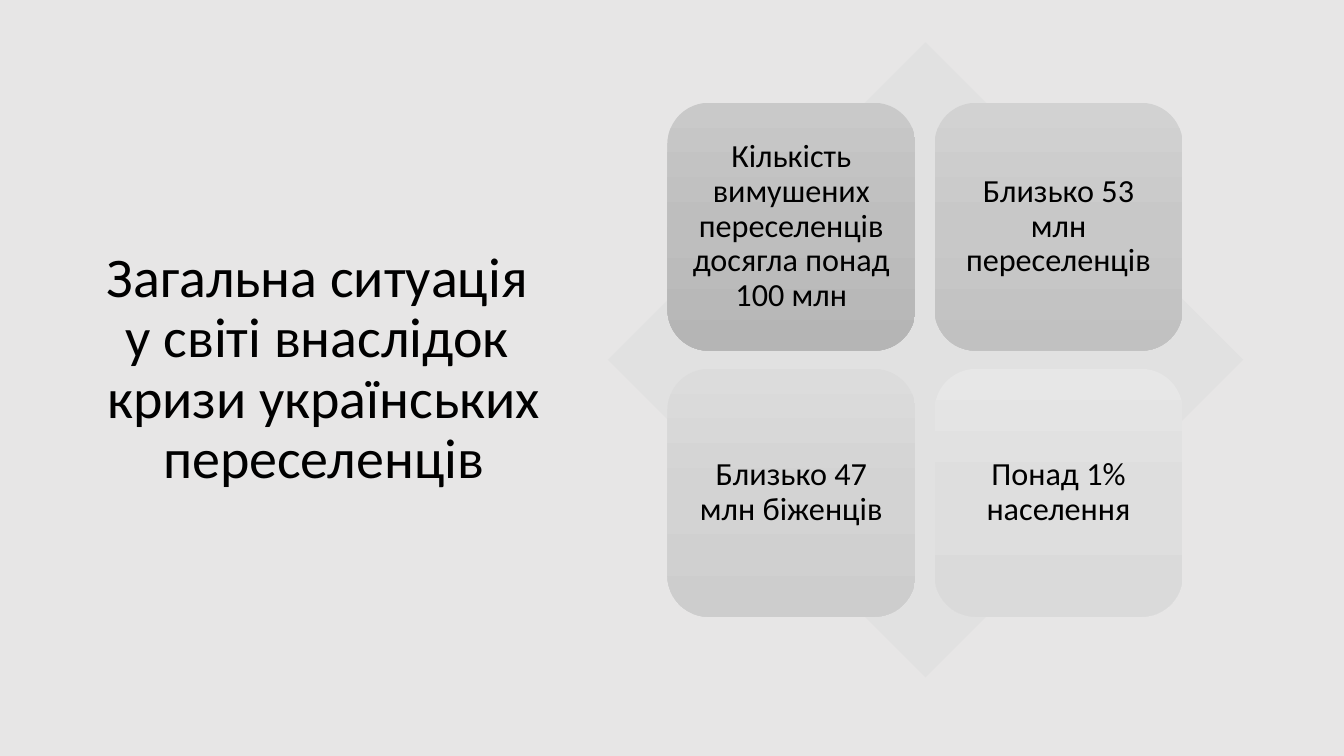
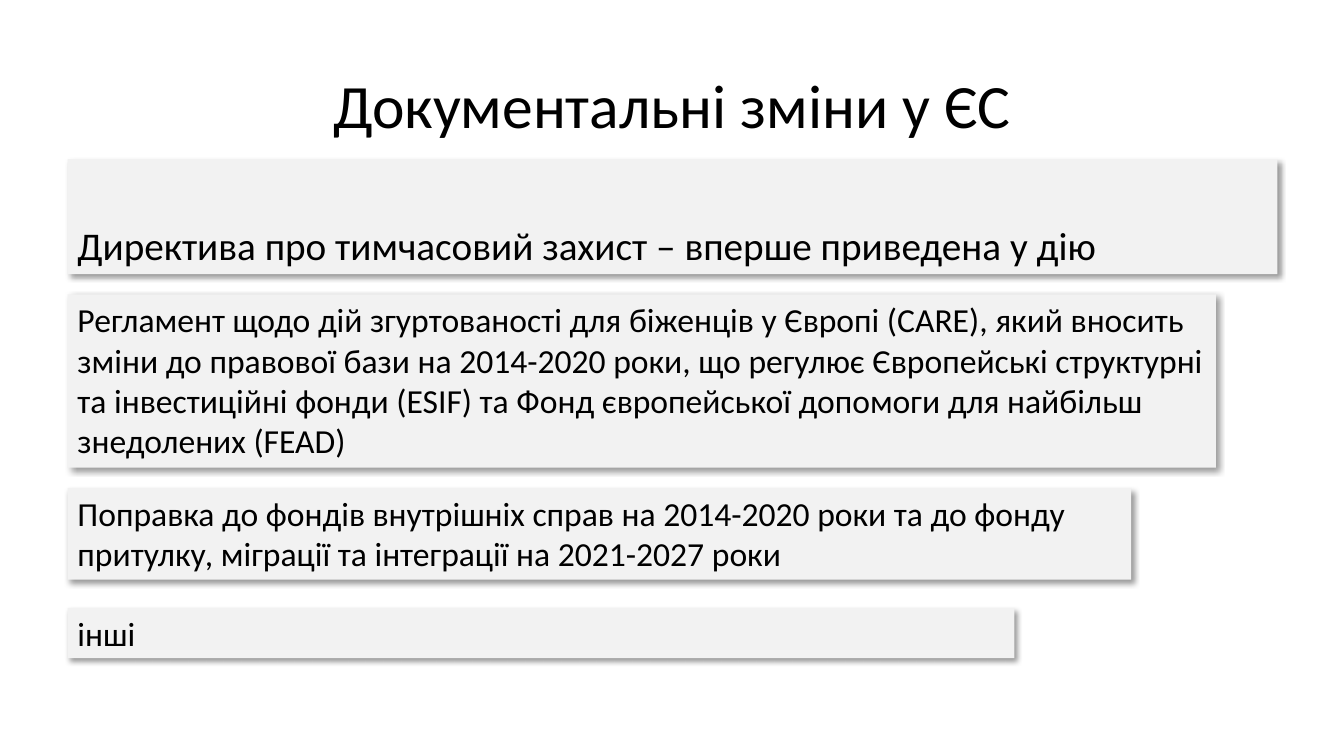
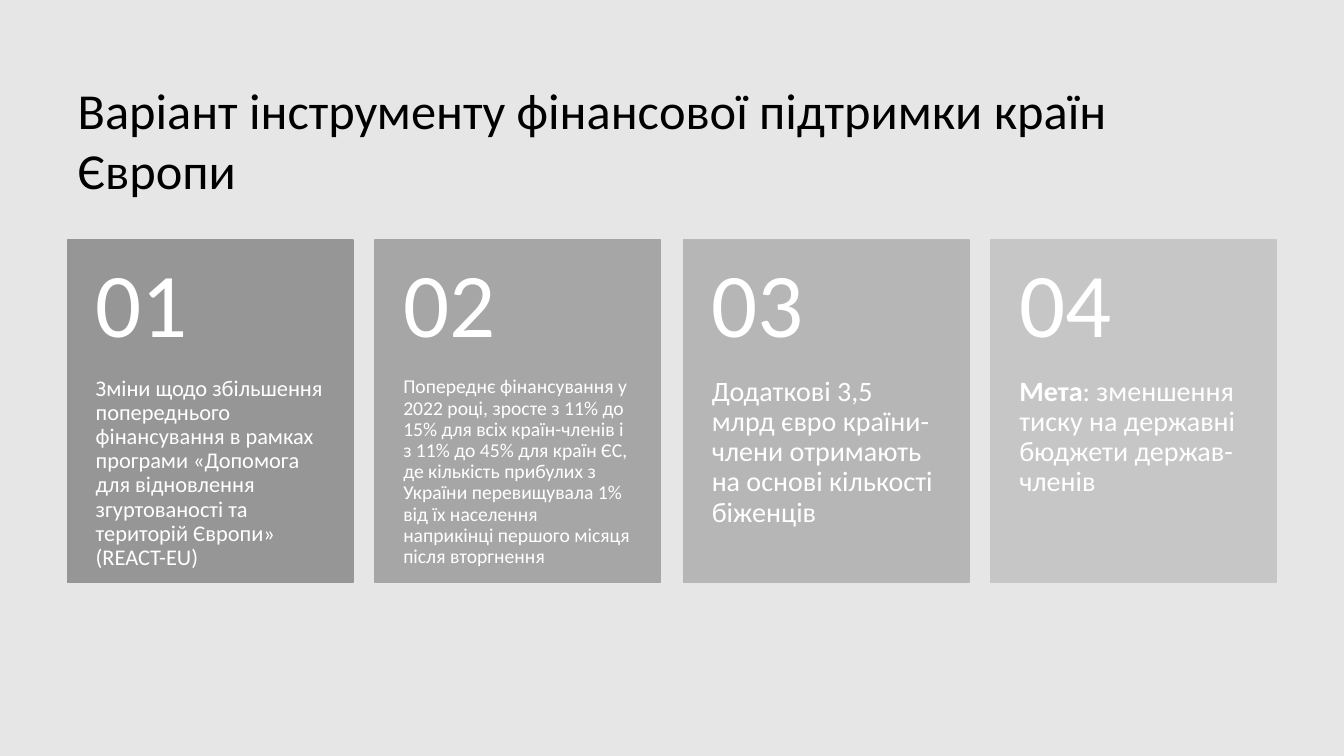
from copy import deepcopy
from dataclasses import dataclass

from lxml.etree import SubElement
from pptx import Presentation
from pptx.dml.color import RGBColor
from pptx.enum.shapes import MSO_SHAPE
from pptx.enum.text import MSO_ANCHOR, MSO_AUTO_SIZE, PP_ALIGN
from pptx.oxml.ns import qn
from pptx.util import Emu, Pt

EMU_PER_PX = 9144  # 100 px to the inch
TITLE_ONLY = 5


@dataclass(frozen=True)
class Theme:
    font: str = "Calibri"
    ink: str = "000000"
    white: str = "FFFFFF"
    grey_page: str = "E7E6E6"
    diamond: str = "E1E1E1"
    bar: str = "F2F2F2"
    title_side: int = 40
    title_top: int = 44
    title_wide: int = 36
    tile_text: int = 23
    bar_lead: int = 28
    bar_text: int = 24
    card_number: int = 65
    tight: float = 0.9


THEME = Theme()

# Slide content
SITUATION_TITLE = "Загальна ситуація \nу світі внаслідок \nкризи українських переселенців"
TILES = [
    ("Кількість вимушених переселенців досягла понад 100 млн", ("C9C9C9", "BEBEBE", "B5B5B5")),
    ("Близько 53 млн переселенців", ("D2D2D2", "C8C8C8", "C1C1C1")),
    ("Близько 47 млн біженців", ("DCDCDC", "D3D3D3", "CDCDCD")),
    ("Понад 1% населення", ("E7E7E7", "DEDEDE", "DADADA")),
]
LEAD_BAR = "Директива про тимчасовий захист – вперше приведена у дію"
BARS = [  # top, width, height, text
    (292, 1139, 172,
     "Регламент щодо дій згуртованості для біженців у Європі (CARE), який вносить зміни "
     "до правової бази на 2014-2020 роки, що регулює Європейські структурні та інвестиційні "
     "фонди (ESIF) та Фонд європейської допомоги для найбільш знедолених (FEAD)"),
    (484, 1055, 91,
     "Поправка до фондів внутрішніх справ на 2014-2020 роки та до фонду притулку, "
     "міграції та інтеграції на 2021-2027 роки"),
    (603, 939, 50, "інші"),
]
CARDS = [  # fill, type size, bold lead, text
    ("969696", 16, "",
     "Зміни щодо збільшення попереднього фінансування в рамках програми «Допомога для "
     "відновлення згуртованості та територій Європи» (REACT-EU)"),
    ("A6A6A6", 14, "",
     "Попереднє фінансування у 2022 році, зросте з 11% до 15% для всіх країн-членів і "
     "з 11% до 45% для країн ЄС, де кількість прибулих з України перевищувала 1% від їх "
     "населення наприкінці першого місяця після вторгнення"),
    ("B6B6B6", 20, "",
     "Додаткові 3,5 млрд євро країни-члени отримають на основі кількості біженців"),
    ("C6C6C6", 20, "Мета", ": зменшення тиску на державні бюджети держав-членів"),
]


def px(value):
    return Emu(round(value) * EMU_PER_PX)


def colour(code):
    return RGBColor.from_string(code)


def write(shape, text, size, ink=THEME.ink, align=PP_ALIGN.LEFT, anchor=MSO_ANCHOR.TOP,
          spacing=1.0, insets=(10, 5, 10, 5), lead=""):
    """Put one paragraph, with an optional bold lead, into a shape."""
    frame = shape.text_frame
    frame.word_wrap = True
    frame.auto_size = MSO_AUTO_SIZE.NONE
    frame.vertical_anchor = anchor
    (frame.margin_left, frame.margin_top,
     frame.margin_right, frame.margin_bottom) = map(px, insets)
    para = frame.paragraphs[0]
    para.text = lead or text
    if lead:
        para.runs[0].font.bold = True
        para.add_run().text = text
    para.alignment = align
    para.line_spacing = spacing
    for span in para.runs:
        span.font.name = THEME.font
        span.font.size = Pt(size)
        span.font.color.rgb = colour(ink)


def add_page(deck, background, title, box, size, **style):
    page = deck.slides.add_slide(deck.slide_layouts[TITLE_ONLY])
    page.background.fill.solid()
    page.background.fill.fore_color.rgb = colour(background)
    heading = page.shapes.title
    heading.left, heading.top, heading.width, heading.height = map(px, box)
    write(heading, title, size, **style)
    return page


def add_block(page, preset, box, fill=None):
    block = page.shapes.add_shape(preset, *map(px, box))
    block.shadow.inherit = False
    block.line.fill.background()
    if fill:
        block.fill.solid()
        block.fill.fore_color.rgb = colour(fill)
    return block


def add_tile(page, box, text, shades):
    """Rounded tile with a three-stop gradient running downwards."""
    tile = add_block(page, MSO_SHAPE.ROUNDED_RECTANGLE, box)
    tile.fill.gradient()
    tile.fill.gradient_angle = 270
    stops = tile._element.spPr.find(".//" + qn("a:gsLst"))
    stops.insert(1, deepcopy(stops[0]))
    for stop, shade, position in zip(tile.fill.gradient_stops, shades, (0, 0.5, 1)):
        stop.color.rgb = colour(shade)
        stop.position = position
    write(tile, text, THEME.tile_text, align=PP_ALIGN.CENTER, anchor=MSO_ANCHOR.MIDDLE,
          spacing=THEME.tight, insets=(10, 10, 10, 10))


def add_bar(page, box, text, size, **style):
    """Pale bar with a soft shadow to the lower right."""
    bar = add_block(page, MSO_SHAPE.RECTANGLE, box, THEME.bar)
    effects = bar._element.spPr.find(qn("a:effectLst"))
    shadow = SubElement(effects, qn("a:outerShdw"), blurRad=str(Pt(4)), dist=str(Pt(3)),
                        dir="2700000", algn="tl", rotWithShape="0")
    tint = SubElement(shadow, qn("a:srgbClr"), val=THEME.ink)
    SubElement(tint, qn("a:alpha"), val="40000")
    write(bar, text, size, **style)


def add_card(page, left, top, width, number, fill, size, lead, text):
    """Card with a large number above its text."""
    height, number_height = 340, 136
    card = add_block(page, MSO_SHAPE.RECTANGLE, (left, top, width, height), fill)
    card.line.color.rgb = colour(fill)
    card.line.width = Pt(1)
    write(card, text, size, ink=THEME.white, spacing=THEME.tight,
          insets=(28, number_height, 28, 0), lead=lead)
    label = page.shapes.add_textbox(*map(px, (left, top, width, number_height)))
    write(label, f"{number:02d}", THEME.card_number, ink=THEME.white,
          anchor=MSO_ANCHOR.MIDDLE, spacing=THEME.tight, insets=(28, 18, 28, 18))


def build_situation(deck):
    page = add_page(deck, THEME.grey_page, SITUATION_TITLE, (65, 216, 512, 276),
                    THEME.title_side, align=PP_ALIGN.CENTER, anchor=MSO_ANCHOR.BOTTOM,
                    spacing=THEME.tight)
    add_block(page, MSO_SHAPE.DIAMOND, (603, 42, 630, 630), THEME.diamond)
    for index, (text, shades) in enumerate(TILES):
        row, column = divmod(index, 2)
        add_tile(page, (662 + column * 265, 102 + row * 264, 246, 246), text, shades)


def build_documents(deck):
    page = add_page(deck, THEME.white, "Документальні зміни у ЄС", (67, 32, 1200, 114),
                    THEME.title_top, align=PP_ALIGN.CENTER, anchor=MSO_ANCHOR.BOTTOM,
                    spacing=THEME.tight)
    add_bar(page, (67, 158, 1200, 114), LEAD_BAR, THEME.bar_lead,
            anchor=MSO_ANCHOR.BOTTOM, spacing=THEME.tight)
    for top, width, height, text in BARS:
        add_bar(page, (67, top, width, height), text, THEME.bar_text)


def build_support(deck):
    page = add_page(deck, THEME.grey_page,
                    "Варіант інструменту фінансової підтримки країн Європи",
                    (67, 73, 1096, 131), THEME.title_wide)
    left, total, width = 67, 1199, 283
    pitch = (total - width) / (len(CARDS) - 1)
    for index, card in enumerate(CARDS):
        add_card(page, left + index * pitch, 238, width, index + 1, *card)


def main():
    deck = Presentation()
    deck.slide_width, deck.slide_height = px(1333), px(750)
    build_situation(deck)
    build_documents(deck)
    build_support(deck)
    deck.save("out.pptx")


if __name__ == "__main__":
    main()
